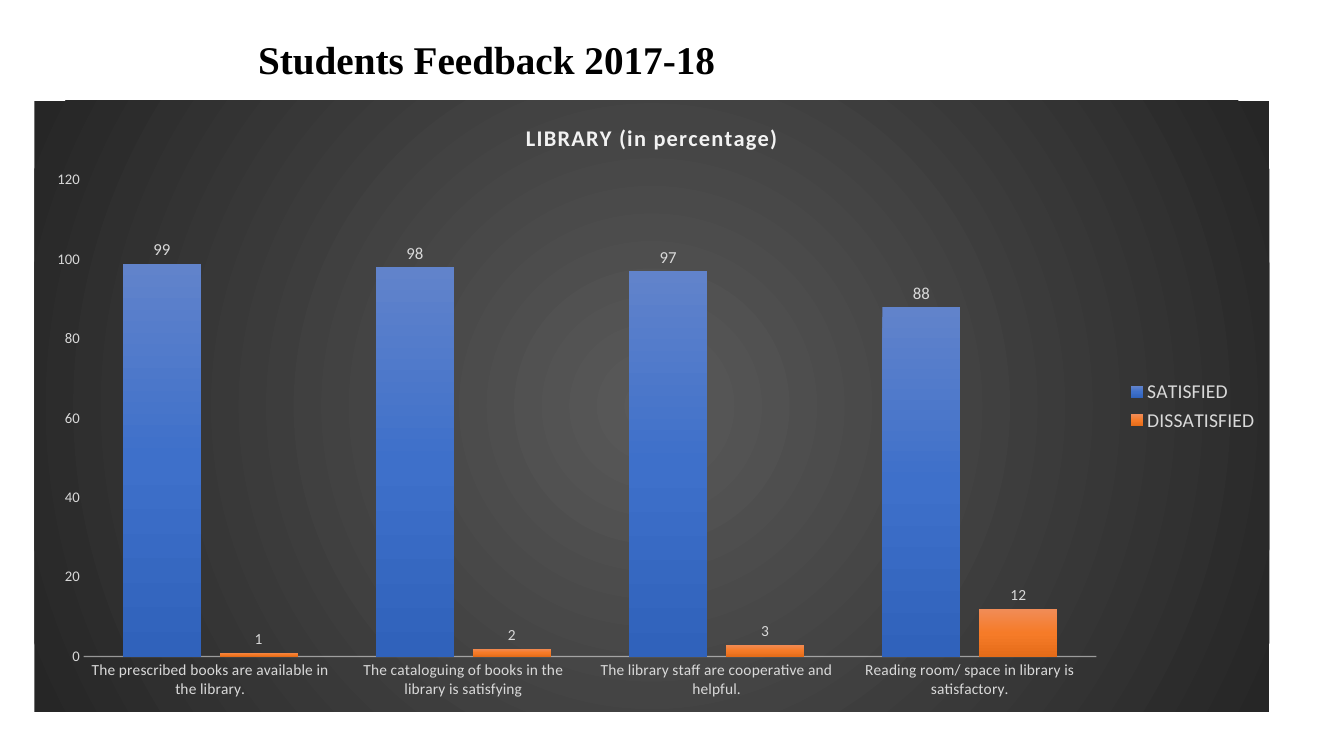
from lxml import etree
from pptx import Presentation
from pptx import util as u
from pptx.chart import data
from pptx.dml.color import RGBColor
from pptx.enum import chart as ce, text
from pptx.oxml import parse_xml
from pptx.oxml.ns import nsdecls, qn

HEX = {"ink": "000000", "pale": "D9D9D9", "head": "F2F2F2"}
BACK = [(0, "595959"), (100, "262626")]
CATS = [
    "The prescribed books are available in the library.",
    "The cataloguing of books in the library is satisfying",
    "The library staff are cooperative and helpful.",
    "Reading room/ space in library is satisfactory.",
]
# name, values, gradient stops, label size
SERIES = [
    ("SATISFIED", (99, 98, 97, 88),
     [(0, "6183CB"), (50, "3E70CA"), (100, "3062BB")], 12),
    ("DISSATISFIED", (1, 2, 3, 12),
     [(0, "F18C57"), (50, "F67B28"), (100, "E56C19")], 11),
]
DOWN = '<a:lin ang="5400000" scaled="0"/>'
ROUND = ('<a:path path="circle"><a:fillToRect l="50000" t="50000" '
         'r="50000" b="50000"/></a:path>')
PLOT = {"x": 0.04, "y": 0.13, "w": 0.82, "h": 0.78}


def put(obj, **vals):
    for key, val in vals.items():
        setattr(obj, key, val)


def shade(stops, way):
    """Return shape properties with a gradient fill and no line."""
    marks = "".join(
        f'<a:gs pos="{pos * 1000}"><a:srgbClr val="{tone}"/></a:gs>'
        for pos, tone in stops)
    return parse_xml(
        f'<c:spPr {nsdecls("c", "a")}><a:gradFill rotWithShape="1">'
        f'<a:gsLst>{marks}</a:gsLst>{way}</a:gradFill>'
        '<a:ln><a:noFill/></a:ln></c:spPr>')


class Deck:
    def __init__(self):
        self.prs = Presentation()
        put(self.prs, slide_width=u.Inches(13.33), slide_height=u.Inches(7.5))
        self.slide = self.prs.slides.add_slide(self.prs.slide_layouts[5])

    def style(self, font, size, tone="pale", face="Calibri", bold=False):
        put(font, name=face, size=u.Pt(size), bold=bold)
        font.color.rgb = RGBColor.from_string(HEX[tone])

    def title(self, words, box):
        shape = self.slide.shapes.title
        put(shape, **dict(zip(("left", "top", "width", "height"),
                              map(u.Inches, box))))
        frame = shape.text_frame
        frame.text = words
        put(frame, word_wrap=True, auto_size=text.MSO_AUTO_SIZE.NONE,
            vertical_anchor=text.MSO_ANCHOR.TOP)
        para = frame.paragraphs[0]
        para.alignment = text.PP_ALIGN.LEFT
        self.style(para.runs[0].font, 28, "ink", "Times New Roman", True)

    def chart(self, head, box):
        feed = data.CategoryChartData()
        feed.categories = CATS
        for name, vals, *_ in SERIES:
            feed.add_series(name, vals)
        chart = self.slide.shapes.add_chart(
            ce.XL_CHART_TYPE.COLUMN_CLUSTERED, *map(u.Inches, box), feed).chart
        self.style(chart.font, 10)
        root = chart._chartSpace
        root.find(qn("c:txPr")).addprevious(shade(BACK, ROUND))
        self.head(chart, head)
        self.axes(chart)
        self.bars(chart.plots[0])
        self.place(root)
        chart.has_legend = True
        put(chart.legend, position=ce.XL_LEGEND_POSITION.RIGHT,
            include_in_layout=False)
        self.style(chart.legend.font, 14)

    def head(self, chart, words):
        chart.has_title = True
        frame = chart.chart_title.text_frame
        frame.text = words
        font = frame.paragraphs[0].runs[0].font
        self.style(font, 16, "head", bold=True)
        font._element.set("spc", "100")

    def axes(self, chart):
        cat, val = chart.category_axis, chart.value_axis
        for axis, size in ((cat, 11), (val, 10.5)):
            put(axis, major_tick_mark=ce.XL_TICK_MARK.NONE,
                minor_tick_mark=ce.XL_TICK_MARK.NONE,
                has_major_gridlines=False)
            self.style(axis.tick_labels.font, size)
        put(val, minimum_scale=0, maximum_scale=120, major_unit=20)
        val.format.line.fill.background()
        line = cat.format.line
        line.width = u.Pt(1)
        line.color.rgb = RGBColor.from_string(HEX["head"])
        tone = next(cat._element.find(qn("c:spPr")).iter(qn("a:srgbClr")))
        etree.SubElement(tone, qn("a:alpha"), val="54000")

    def bars(self, plot):
        put(plot, gap_width=100, overlap=-24, vary_by_categories=False)
        for bar, (_, _, stops, size) in zip(plot.series, SERIES):
            bar.format.fill.solid()
            old = bar._element.find(qn("c:spPr"))
            old.getparent().replace(old, shade(stops, DOWN))
            tags = bar.data_labels
            put(tags, show_value=True,
                position=ce.XL_LABEL_POSITION.OUTSIDE_END)
            self.style(tags.font, size)

    def place(self, root):
        """Fix the inner plot area as shares of the chart."""
        area = next(root.iter(qn("c:plotArea")))
        for old in area.findall(qn("c:layout")):
            area.remove(old)
        spots = "".join(f'<c:{k} val="{v}"/>' for k, v in PLOT.items())
        area.insert(0, parse_xml(
            f'<c:layout {nsdecls("c")}><c:manualLayout>'
            '<c:layoutTarget val="inner"/><c:xMode val="edge"/>'
            f'<c:yMode val="edge"/>{spots}</c:manualLayout></c:layout>'))


def main():
    deck = Deck()
    deck.title("Students Feedback 2017-18", (2.46, 0.3, 5.63, 0.57))
    deck.chart("LIBRARY (in percentage)", (0.34, 1, 12.25, 6.06))
    deck.prs.save("out.pptx")


if __name__ == "__main__":
    main()
